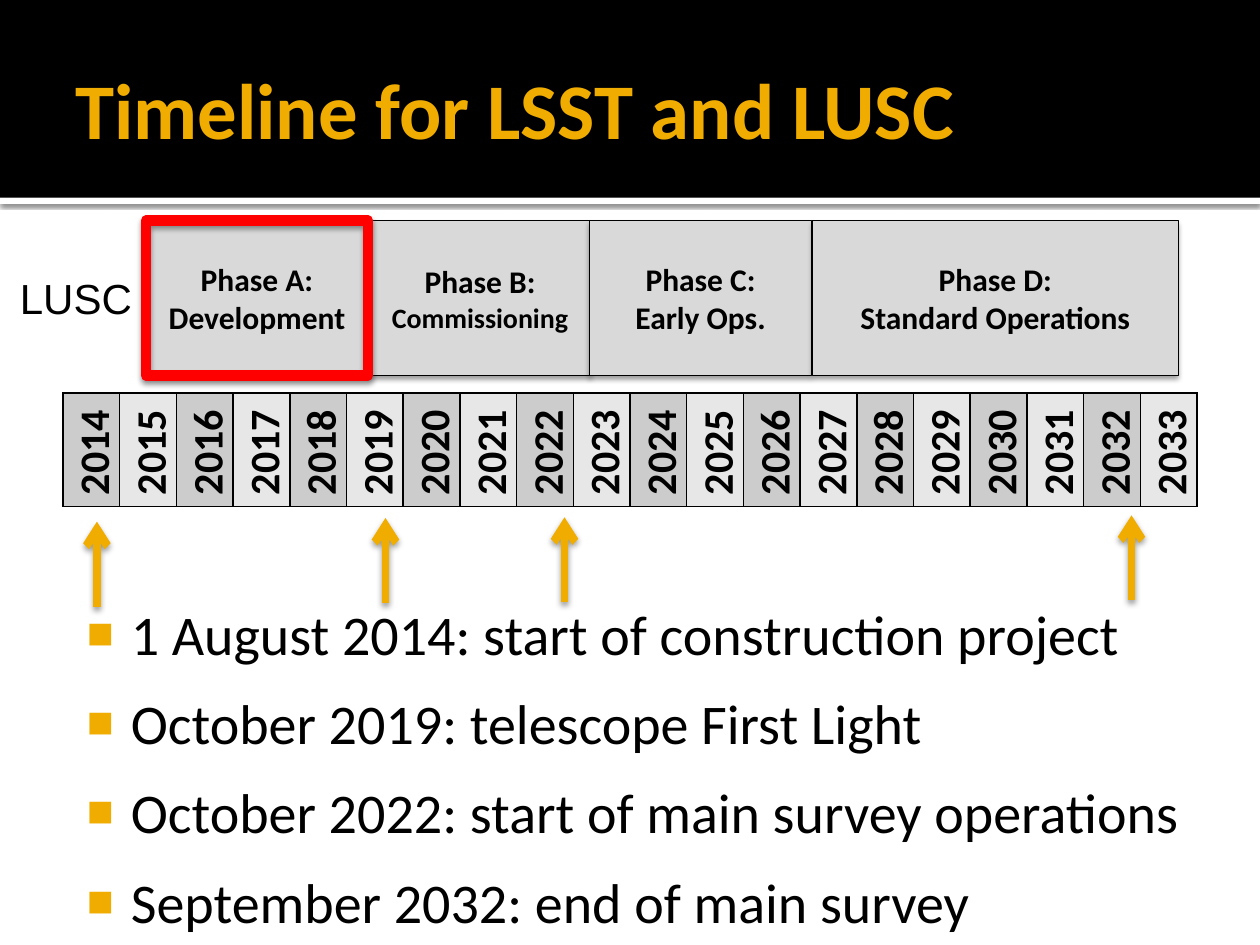
from dataclasses import dataclass
from lxml import etree
from pptx import Presentation
from pptx import util as u
from pptx.dml import color
from pptx.enum import shapes, text
from pptx.oxml import ns

Pt = u.Pt


@dataclass(frozen=True)
class Theme:
    gold: str = "F0AD00"
    black: str = "000000"
    white: str = "FFFFFF"
    red: str = "FF0000"
    panel: str = "D9D9D9"
    dark: str = "CCCCCC"
    pale: str = "E7E7E7"
    face: str = "Calibri"
    plain: str = "Arial"
    title: int = 45
    body: int = 32
    label: int = 24
    phase: int = 18
    small: int = 16


def rgb(code):
    return color.RGBColor.from_string(code)


def node(parent, tag, **attrs):
    return etree.SubElement(parent, ns.qn("a:" + tag), attrs)


def write(para, words, size, face=Theme.face, ink=Theme.black, bold=False):
    run = para.add_run()
    run.text = words
    font = run.font
    font.size, font.name, font.bold = Pt(size), face, bold
    font.color.rgb = rgb(ink)


def cast(item, alpha, blur, dist):
    spot = node(item._element.spPr, "effectLst")
    shade = node(spot, "outerShdw", blurRad=str(Pt(blur)), dist=str(Pt(dist)),
                 dir="5400000", algn="ctr", rotWithShape="0")
    tint = node(shade, "srgbClr", val=Theme.black)
    node(tint, "alpha", val=str(alpha * 1000))


class Board:
    def __init__(self, slide, theme):
        self.slide, self.theme = slide, theme

    def rect(self, x, y, w, h, fill=None, line=None, width=0.5, shade=None):
        box = self.slide.shapes.add_shape(
            shapes.MSO_SHAPE.RECTANGLE, Pt(x), Pt(y), Pt(w), Pt(h))
        if fill:
            box.fill.solid()
            box.fill.fore_color.rgb = rgb(fill)
        else:
            box.fill.background()
        if line:
            box.line.color.rgb = rgb(line)
            box.line.width = Pt(width)
        else:
            box.line.fill.background()
        if shade:
            cast(box, *shade)
        else:
            box.shadow.inherit = False
        return box

    def frame(self, x, y, w, h, pads=(7.2, 3.6, 7.2, 3.6), wrap=True):
        box = self.slide.shapes.add_textbox(Pt(x), Pt(y), Pt(w), Pt(h))
        area = box.text_frame
        area.word_wrap = wrap
        (area.margin_left, area.margin_top,
         area.margin_right, area.margin_bottom) = map(Pt, pads)
        return area

    def title(self, words):
        area = self.frame(36, 12.2, 648, 98.6, (7.2, 3.6, 3.6, 3.6))
        area.vertical_anchor = text.MSO_ANCHOR.MIDDLE
        write(area.paragraphs[0], words, self.theme.title,
              ink=self.theme.gold, bold=True)

    def label(self, words, x, y, w, h):
        area = self.frame(x, y, w, h, wrap=False)
        write(area.paragraphs[0], words, self.theme.label, self.theme.plain)

    def phase(self, x, y, w, h, head, name, size):
        box = self.rect(x, y, w, h, self.theme.panel, self.theme.black,
                        shade=(38, 3.1, 2))
        para = box.text_frame.paragraphs[0]
        para.alignment = text.PP_ALIGN.CENTER
        write(para, head, self.theme.phase, bold=True)
        para.add_line_break()
        write(para, name, size, bold=True)

    def years(self, x, y, w, h, span):
        grid = self.slide.shapes.add_table(
            1, len(span), Pt(x), Pt(y), Pt(w), Pt(h)).table
        for col, year in enumerate(span):
            grid.columns[col].width = Pt(w / len(span))
            cell = grid.cell(0, col)
            cell.margin_left = cell.margin_right = Pt(6.5)
            cell.margin_top = cell.margin_bottom = Pt(3.6)
            props = cell._tc.get_or_add_tcPr()
            props.set("vert", "vert270")
            for side in ("lnL", "lnR", "lnT", "lnB"):
                edge = node(props, side, w=str(Pt(1)))
                node(node(edge, "solidFill"), "srgbClr", val=self.theme.black)
            cell.fill.solid()
            cell.fill.fore_color.rgb = rgb(
                self.theme.pale if col % 2 else self.theme.dark)
            write(cell.text_frame.paragraphs[0], str(year),
                  self.theme.label, bold=True)

    def arrow(self, x, top, size):
        line = self.slide.shapes.add_connector(
            shapes.MSO_CONNECTOR.STRAIGHT,
            Pt(x), Pt(top + size), Pt(x), Pt(top))
        line.line.color.rgb = rgb(self.theme.gold)
        line.line.width = Pt(4.5)
        node(line.line._get_or_add_ln(), "tailEnd", type="arrow")
        cast(line, 38, 3.5, 2)

    def bullets(self, x, y, w, h, items):
        area = self.frame(x, y, w, h, (4.3, 7.2, 7.2, 3.6))
        for num, words in enumerate(items):
            para = area.add_paragraph() if num else area.paragraphs[0]
            para.space_before = Pt(12.5 if num else 0)
            props = para._p.get_or_add_pPr()
            props.set("marL", str(Pt(34.5)))
            props.set("indent", str(Pt(-25.2)))
            node(node(props, "buClr"), "srgbClr", val=self.theme.gold)
            node(props, "buSzPct", val="80000")
            node(props, "buFont", typeface=self.theme.plain)
            node(props, "buChar", char="■")
            write(para, words, self.theme.body)


def main():
    deck = Presentation()
    deck.slide_width, deck.slide_height = Pt(720), Pt(540)
    theme = Theme()
    board = Board(deck.slides.add_slide(deck.slide_layouts[6]), theme)

    board.rect(0, 113, 720, 3.6, theme.white, shade=(60, 2.5, 0.8))
    board.rect(0, 0, 720, 113, theme.black)
    board.title("Timeline for LSST and LUSC")
    board.bullets(36, 335.5, 648, 250.6, [
        "1 August 2014: start of construction project",
        "October 2019: telescope First Light",
        "October 2022: start of main survey operations",
        "September 2032: end of main survey",
    ])
    board.years(36, 224.6, 648, 64.8, range(2014, 2034))
    for x, top in ((55.4, 298.1), (220.3, 296), (322.6, 295.6), (646.6, 294.5)):
        board.arrow(x, top, 48.6)

    high, wide, tall = 126, 126.7, 88.6
    for x, w, head, name, size in (
        (83.5, wide, "Phase A:", "Development", theme.phase),
        (211, wide, "Phase B:", "Commissioning", theme.small),
        (337, wide, "Phase C:", "Early Ops.", theme.phase),
        (464.4, 208.8, "Phase D:", "Standard Operations", theme.phase),
    ):
        board.phase(x, high, w, tall, head, name, size)
    board.rect(83.5, high, wide, tall, line=theme.red, width=6,
               shade=(38, 3.1, 2))
    board.label("LUSC", 4.3, 151.9, 79.2, 36)
    deck.save("out.pptx")


if __name__ == "__main__":
    main()
